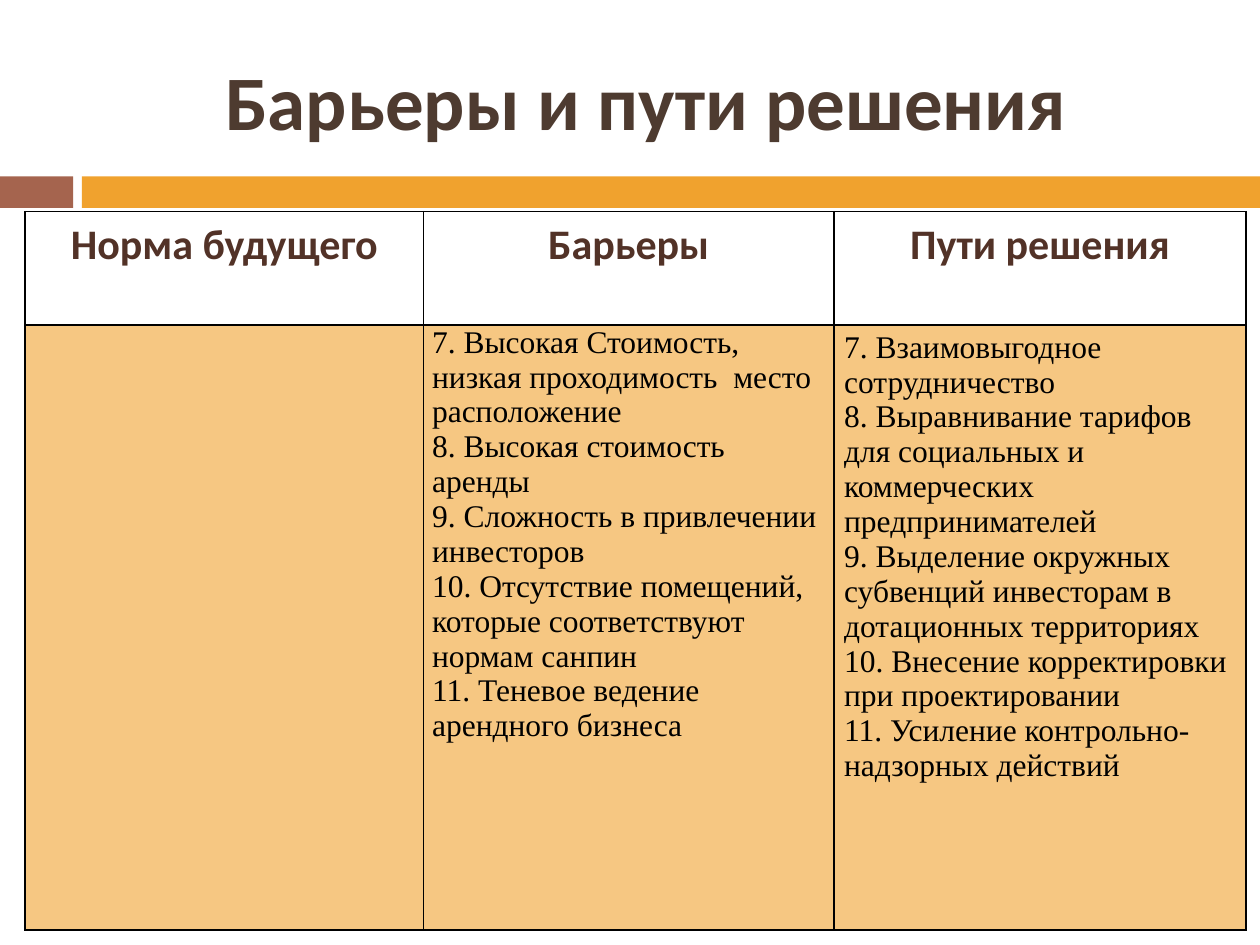
from lxml.etree import SubElement
from pptx import Presentation
from pptx.dml.color import RGBColor
from pptx.enum.shapes import MSO_SHAPE
from pptx.enum.text import MSO_ANCHOR, PP_ALIGN
from pptx.oxml.ns import qn
from pptx.util import Inches, Pt

HEADINGS = ["Норма будущего", "Барьеры", "Пути решения"]
BARRIERS = [
    "7. Высокая Стоимость, низкая проходимость  место  расположение",
    "8. Высокая стоимость аренды",
    "9. Сложность в привлечении инвесторов",
    "10. Отсутствие помещений, которые соответствуют нормам санпин",
    "11. Теневое ведение арендного бизнеса",
]
SOLUTIONS = [
    "7. Взаимовыгодное сотрудничество",
    "8. Выравнивание тарифов для социальных и коммерческих предпринимателей",
    "9. Выделение окружных субвенций инвесторам в дотационных территориях",
    "10. Внесение корректировки при проектировании",
    "11. Усиление контрольно-надзорных действий",
]


def color(value):
    return RGBColor.from_string(value)


class SlideBuilder:
    HEAD_FONT, BODY_FONT = "Calibri", "Times New Roman"
    TITLE, HEADING, BODY = "4E3B30", "523227", "000000"
    BROWN, ORANGE, CELL, BORDER = "A5644E", "F0A22E", "F6C782", "000000"

    def __init__(self, page):
        self.page = page

    def set_text(self, frame, lines, font, size, ink, bold=False,
                 align=PP_ALIGN.LEFT, spacing=1.0):
        frame.text = "\n".join(lines)
        for para in frame.paragraphs:
            para.alignment = align
            para.line_spacing = spacing
            for span in para.runs:
                span.font.name = font
                span.font.size = Pt(size)
                span.font.bold = bold
                span.font.color.rgb = color(ink)

    def title(self, text, left, top, width, height):
        box = self.page.shapes.title
        box.left, box.top = Inches(left), Inches(top)
        box.width, box.height = Inches(width), Inches(height)
        box.text_frame.vertical_anchor = MSO_ANCHOR.MIDDLE
        self.set_text(box.text_frame, [text], self.HEAD_FONT, 44, self.TITLE,
                      bold=True, align=PP_ALIGN.CENTER)

    def bar(self, left, top, width, height, fill):
        box = self.page.shapes.add_shape(
            MSO_SHAPE.RECTANGLE, Inches(left), Inches(top), Inches(width), Inches(height))
        box.shadow.inherit = False
        box.fill.solid()
        box.fill.fore_color.rgb = color(fill)
        box.line.fill.background()

    def table(self, left, top, columns, rows):
        """Add an empty table with the given column widths and row heights."""
        table = self.page.shapes.add_table(
            len(rows), len(columns), Inches(left), Inches(top),
            Inches(sum(columns)), Inches(sum(rows))).table
        table.horz_banding = False
        for column, width in zip(table.columns, columns):
            column.width = Inches(width)
        for row, height in zip(table.rows, rows):
            row.height = Inches(height)
        return table

    def cell(self, cell, lines, side, edge=0, fill=None, **style):
        """Fill a cell; side and edge are its horizontal and vertical margins."""
        cell.margin_left = cell.margin_right = Inches(side)
        cell.margin_top = cell.margin_bottom = Inches(edge)
        self.border(cell)
        if fill:
            cell.fill.solid()
            cell.fill.fore_color.rgb = color(fill)
        else:
            cell.fill.background()
        if lines:
            self.set_text(cell.text_frame, lines, **style)

    def border(self, cell):
        properties = cell._tc.get_or_add_tcPr()
        for tag in ("a:lnL", "a:lnR", "a:lnT", "a:lnB"):
            line = SubElement(properties, qn(tag), w=str(Pt(1)))
            solid = SubElement(line, qn("a:solidFill"))
            SubElement(solid, qn("a:srgbClr"), val=self.BORDER)


def main():
    deck = Presentation()
    deck.slide_width, deck.slide_height = Inches(10), Inches(7.5)
    slide = SlideBuilder(deck.slides.add_slide(deck.slide_layouts[5]))

    slide.bar(0, 1.4, 0.58, 0.25, slide.BROWN)
    slide.bar(0.65, 1.4, 9.35, 0.25, slide.ORANGE)
    slide.title("Барьеры и пути решения", 0.67, 0.25, 8.92, 1.08)

    table = slide.table(0.2, 1.68, [3.16, 3.26, 3.27], [0.9, 4.8])
    for index, heading in enumerate(HEADINGS):
        slide.cell(table.cell(0, index), [heading], 0.06, font=slide.HEAD_FONT, size=24,
                   ink=slide.HEADING, bold=True, align=PP_ALIGN.CENTER, spacing=1.15)
    contents = [([], 0.1, 0.05), (BARRIERS, 0.07, 0), (SOLUTIONS, 0.08, 0.04)]
    for index, (lines, side, edge) in enumerate(contents):
        slide.cell(table.cell(1, index), lines, side, edge, slide.CELL,
                   font=slide.BODY_FONT, size=18, ink=slide.BODY)

    deck.save("out.pptx")


if __name__ == "__main__":
    main()
